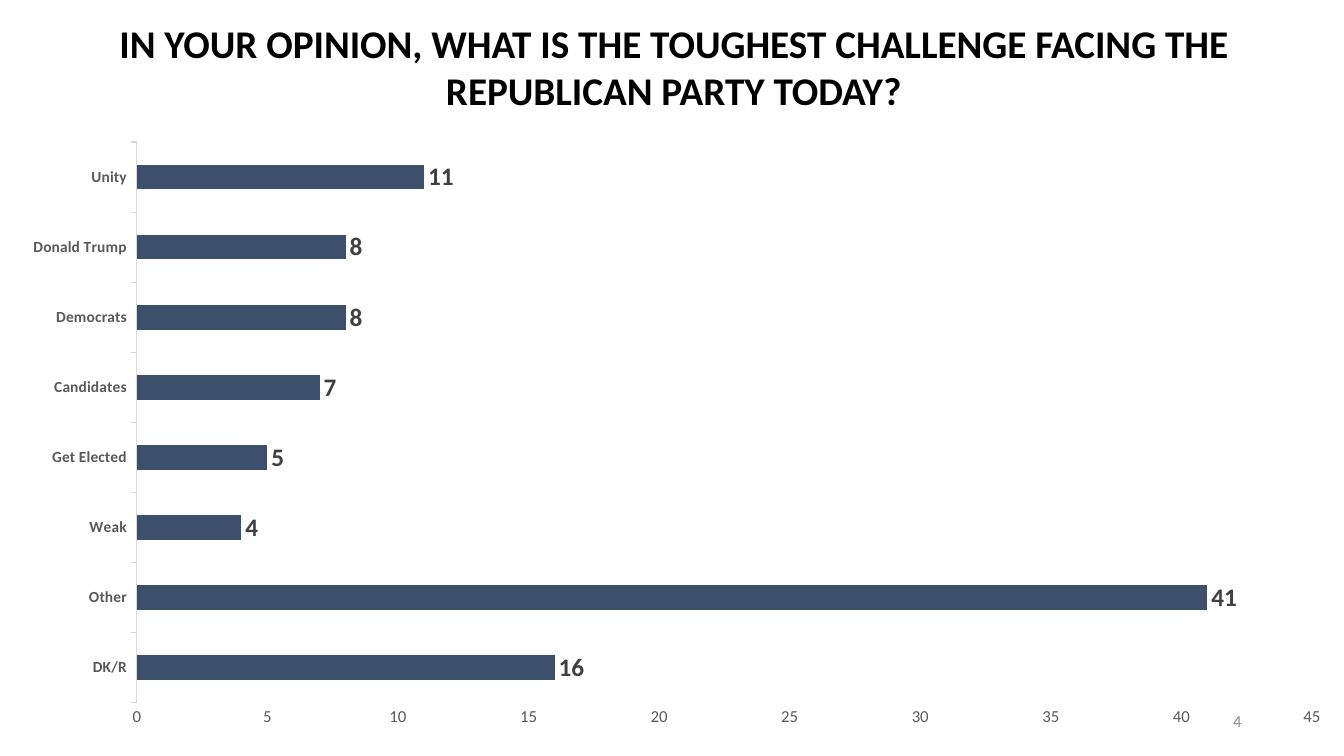
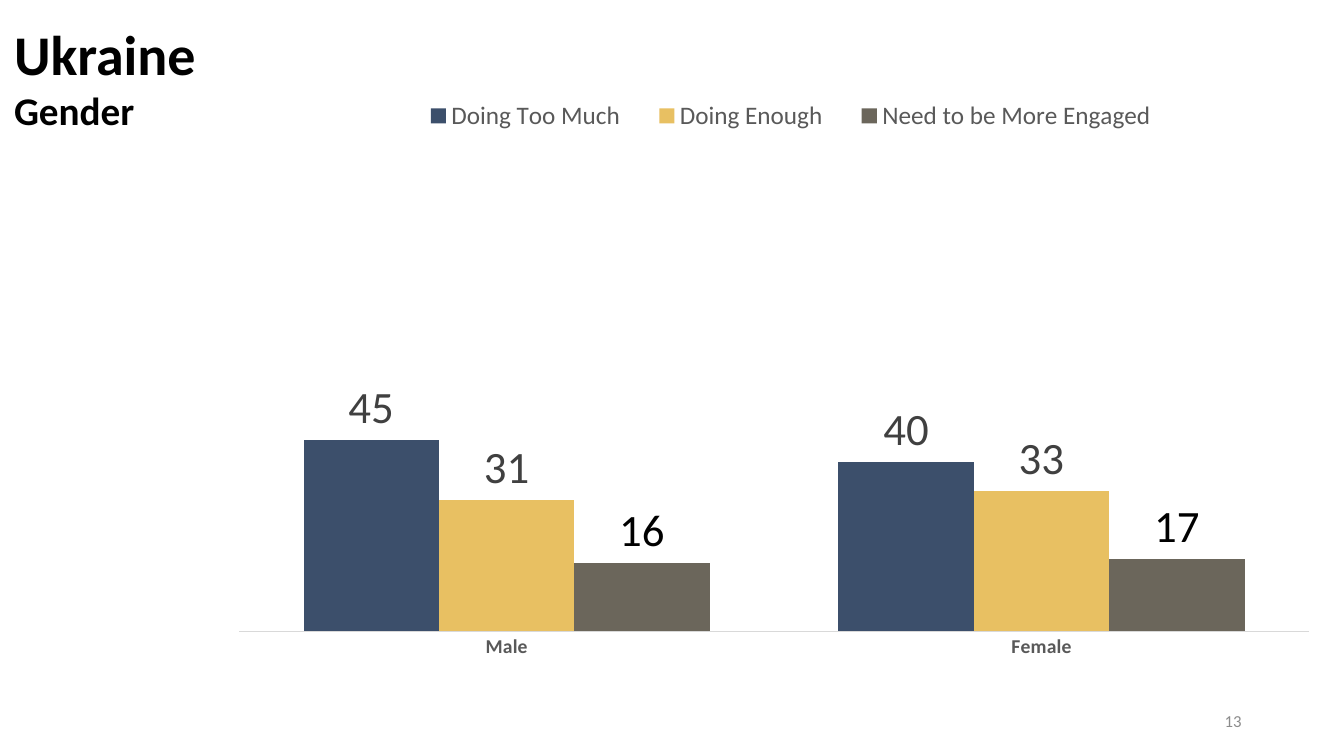
from dataclasses import dataclass

from lxml import etree
from pptx import Presentation
from pptx.chart.data import CategoryChartData
from pptx.dml.color import RGBColor
from pptx.enum import chart as ch, text as tx
from pptx.oxml.ns import qn
from pptx.util import Cm, Pt


@dataclass(frozen=True)
class Theme:
    font: str = "Calibri"
    black: str = "000000"
    dark: str = "404040"
    gray: str = "595959"
    pale: str = "8C8C8C"
    rule: str = "D9D9D9"
    navy: str = "3C4F6B"
    gold: str = "E8C062"
    olive: str = "6B665B"
    head: int = 40
    sub: int = 28
    note: int = 12
    base: int = 10


T = Theme()

SLIDES = [
    dict(
        title=[("IN YOUR OPINION, WHAT IS THE TOUGHEST CHALLENGE FACING THE "
                "REPUBLICAN PARTY TODAY?", T.sub)],
        align=tx.PP_ALIGN.CENTER, box=(0.1, 0.36, 33.76, 2.64), page="4",
        chart=dict(
            kind=ch.XL_CHART_TYPE.BAR_CLUSTERED, box=(0, 3.3, 33.5, 15.52),
            plot=(0.103, 0.018, 0.884, 0.91), legend=None, gap=182,
            tick=ch.XL_TICK_MARK.OUTSIDE, cat=11, val=12, top=45, step=5,
            label=18, bold=True,
            cats=["DK/R", "Other", "Weak", "Get Elected", "Candidates",
                  "Democrats", "Donald Trump", "Unity"],
            series=[("Series 1", [16, 41, 4, 5, 7, 8, 8, 11], T.navy, T.dark)],
        ),
    ),
    dict(
        title=[("Ukraine", T.head), ("Gender", T.sub)],
        align=tx.PP_ALIGN.LEFT, box=(0.1, 0.36, 20.98, 4.88), page="13",
        chart=dict(
            kind=ch.XL_CHART_TYPE.COLUMN_CLUSTERED, box=(5.64, 1.35, 27.74, 15.7),
            plot=(0.014, 0.247, 0.972, 0.68), legend=(0.16, 0.06, 0.71, 0.08),
            gap=95, tick=ch.XL_TICK_MARK.NONE, cat=14, val=None, top=100, step=20,
            label=32, bold=False,
            cats=["Male", "Female"],
            series=[("Doing Too Much", [45, 40], T.navy, T.dark),
                    ("Doing Enough", [31, 33], T.gold, T.dark),
                    ("Need to be More Engaged", [16, 17], T.olive, T.black)],
        ),
    ),
]


def style(font, size, color, bold=False):
    font.name, font.size, font.bold = T.font, Pt(size), bold
    font.color.rgb = RGBColor.from_string(color)


def write(frame, lines, align, color, bold=False):
    frame.word_wrap = True
    frame.auto_size = tx.MSO_AUTO_SIZE.NONE
    for i, (words, size) in enumerate(lines):
        para = frame.add_paragraph() if i else frame.paragraphs[0]
        para.alignment = align
        run = para.add_run()
        run.text = words
        style(run.font, size, color, bold)


def place(shape, box):
    shape.left, shape.top, shape.width, shape.height = map(Cm, box)


def pin(parent, index, box, inner=False):
    """Fix a chart part at fractions of the chart area."""
    for old in parent.findall(qn("c:layout")):
        parent.remove(old)
    outer = etree.Element(qn("c:layout"))
    parent.insert(index, outer)
    layout = etree.SubElement(outer, qn("c:manualLayout"))
    pairs = [("layoutTarget", "inner")] if inner else []
    pairs += [("xMode", "edge"), ("yMode", "edge"), *zip("xywh", box)]
    for tag, value in pairs:
        etree.SubElement(layout, qn("c:" + tag)).set("val", str(value))


def draw(slide, c):
    data = CategoryChartData()
    data.categories = c["cats"]
    for name, vals, *_ in c["series"]:
        data.add_series(name, vals)
    chart = slide.shapes.add_chart(c["kind"], *map(Cm, c["box"]), data).chart
    style(chart.font, T.base, T.black)
    chart.has_title = False

    plot = chart.plots[0]
    plot.gap_width, plot.overlap, plot.vary_by_categories = c["gap"], 0, False
    for series, (_, _, fill, ink) in zip(plot.series, c["series"]):
        series.format.fill.solid()
        series.format.fill.fore_color.rgb = RGBColor.from_string(fill)
        labels = series.data_labels
        labels.show_value = True
        labels.position = ch.XL_LABEL_POSITION.OUTSIDE_END
        style(labels.font, c["label"], ink, c["bold"])

    cat, val = chart.category_axis, chart.value_axis
    cat.major_tick_mark = c["tick"]
    style(cat.tick_labels.font, c["cat"], T.gray, True)
    cat.format.line.width = Pt(0.75)
    cat.format.line.color.rgb = RGBColor.from_string(T.rule)
    val.minimum_scale, val.maximum_scale, val.major_unit = 0, c["top"], c["step"]
    val.has_major_gridlines = False
    val.major_tick_mark = ch.XL_TICK_MARK.NONE
    val.format.line.fill.background()
    val.visible = c["val"] is not None
    if val.visible:
        style(val.tick_labels.font, c["val"], T.gray)

    pin(chart.element.find(".//" + qn("c:plotArea")), 0, c["plot"], True)
    chart.has_legend = c["legend"] is not None
    if chart.has_legend:
        legend = chart.legend
        legend.position = ch.XL_LEGEND_POSITION.TOP
        legend.include_in_layout = False
        style(legend.font, 18, T.gray)
        pin(chart.element.find(".//" + qn("c:legend")), 1, c["legend"])


def build(deck, item):
    slide = deck.slides.add_slide(deck.slide_layouts[5])
    title = slide.shapes.title
    place(title, item["box"])
    title.text_frame.vertical_anchor = tx.MSO_ANCHOR.TOP
    write(title.text_frame, item["title"], item["align"], T.black, True)
    draw(slide, item["chart"])
    page = slide.shapes.add_textbox(*map(Cm, (23.92, 17.66, 7.62, 1.01)))
    page.text_frame.vertical_anchor = tx.MSO_ANCHOR.MIDDLE
    write(page.text_frame, [(item["page"], T.note)], tx.PP_ALIGN.RIGHT, T.pale)


def main():
    deck = Presentation()
    deck.slide_width, deck.slide_height = Cm(33.87), Cm(19.05)
    for item in SLIDES:
        build(deck, item)
    deck.save("out.pptx")


if __name__ == "__main__":
    main()
